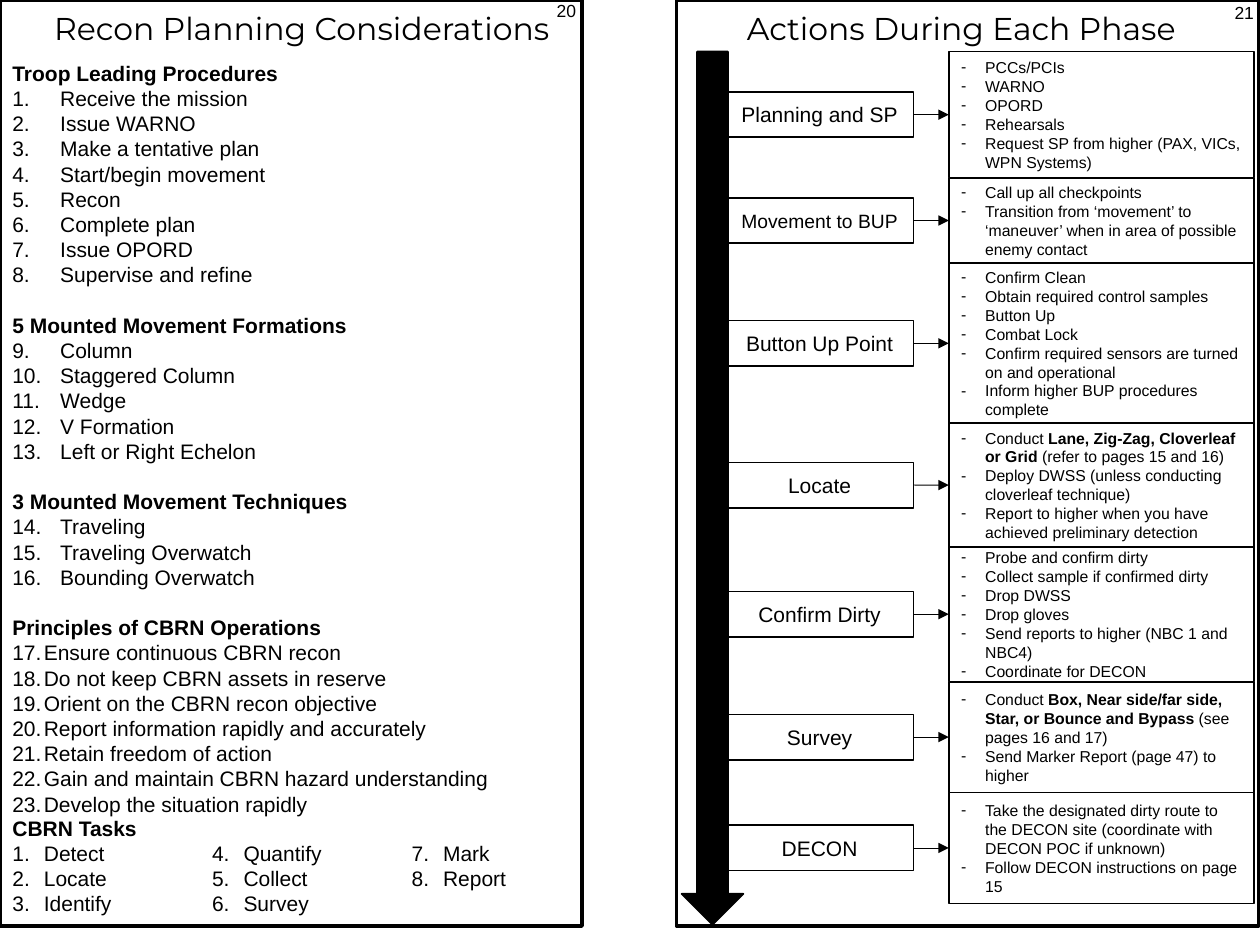
from pptx import Presentation
from pptx.dml.color import RGBColor
from pptx.enum.shapes import MSO_CONNECTOR, MSO_SHAPE
from pptx.enum.text import MSO_ANCHOR, PP_ALIGN
from pptx.oxml.ns import qn
from pptx.util import Inches, Pt
from lxml.etree import SubElement

BLACK = RGBColor(0, 0, 0)
WHITE = RGBColor(255, 255, 255)

# Content: page frames as left, title left, title width, title, number left, top, number
PAGES = [
    (0, 0.04, 4.71, "Recon Planning Considerations", 4.32, -0.05, "20"),
    (5.37, 5.26, 4.74, "Actions During Each Phase", 9.7, -0.03, "21"),
]

# Numbered lists: heading, gap above in points, indent, items
LISTS = [
    ("Troop Leading Procedures", 0, 0.38, [
        "Receive the mission", "Issue WARNO", "Make a tentative plan",
        "Start/begin movement", "Recon", "Complete plan", "Issue OPORD",
        "Supervise and refine"]),
    ("5 Mounted Movement Formations", 14.4, 0.38, [
        "Column", "Staggered Column", "Wedge", "V Formation",
        "Left or Right Echelon"]),
    ("3 Mounted Movement Techniques", 14.4, 0.38, [
        "Traveling", "Traveling Overwatch", "Bounding Overwatch"]),
    ("Principles of CBRN Operations", 14.4, 0.25, [
        "Ensure continuous CBRN recon", "Do not keep CBRN assets in reserve",
        "Orient on the CBRN recon objective",
        "Report information rapidly and accurately",
        "Retain freedom of action",
        "Gain and maintain CBRN hazard understanding",
        "Develop the situation rapidly"]),
]
TASKS = ["Detect", "Locate", "Identify", "Quantify", "Collect", "Survey",
         "Mark", "Report"]

# Phases: label, label size, box height, actions (bold between bars)
PHASES = [
    ("Planning and SP", 12, 1.0, [
        "PCCs/PCIs", "WARNO", "OPORD", "Rehearsals",
        "Request SP from higher (PAX, VICs, WPN Systems)"]),
    ("Movement to BUP", 11, 0.68, [
        "Call up all checkpoints",
        "Transition from ‘movement’ to ‘maneuver’ when in area of possible "
        "enemy contact"]),
    ("Button Up Point", 12, 1.27, [
        "Confirm Clean", "Obtain required control samples", "Button Up",
        "Combat Lock", "Confirm required sensors are turned on and operational",
        "Inform higher BUP procedures complete"]),
    ("Locate", 12, 0.98, [
        "Conduct |Lane, Zig-Zag, Cloverleaf or Grid |(refer to pages 15 and 16)",
        "Deploy DWSS (unless conducting cloverleaf technique)",
        "Report to higher when you have achieved preliminary detection"]),
    ("Confirm Dirty", 12, 1.07, [
        "Probe and confirm dirty", "Collect sample if confirmed dirty",
        "Drop DWSS", "Drop gloves", "Send reports to higher (NBC 1 and NBC4)",
        "Coordinate for DECON"]),
    ("Survey", 12, 0.88, [
        "Conduct |Box, Near side/far side, Star, or Bounce and Bypass "
        "|(see pages 16 and 17)",
        "Send Marker Report (page 47) to higher"]),
    ("DECON", 12, 0.88, [
        "Take the designated dirty route to the DECON site (coordinate with "
        "DECON POC if unknown)",
        "Follow DECON instructions on page 15"]),
]

prs = Presentation()
prs.slide_width, prs.slide_height = Inches(10), Inches(7.5)
slide = prs.slides.add_slide(prs.slide_layouts[6])
shapes = slide.shapes


def add_text(x, y, w, h, wrap=True):
    frame = shapes.add_textbox(*map(Inches, (x, y, w, h))).text_frame
    frame.word_wrap = wrap
    return frame


def add_box(kind, x, y, w, h, width, fill=WHITE):
    box = shapes.add_shape(kind, *map(Inches, (x, y, w, h)))
    box.shadow.inherit = False
    box.fill.solid()
    box.fill.fore_color.rgb = fill
    box.line.color.rgb = BLACK
    box.line.width = Pt(width)
    box.text_frame.word_wrap = True
    box.text_frame.vertical_anchor = MSO_ANCHOR.MIDDLE
    return box


def add_para(frame, text, size, font="Arial", bold=False, **form):
    first = frame.paragraphs[0]
    para = first if not first.runs else frame.add_paragraph()
    for name, value in {"alignment": PP_ALIGN.LEFT, **form}.items():
        setattr(para, name, value)
    for i, part in enumerate(text.split("|")):
        run = para.add_run()
        run.text = part
        run.font.color.rgb = BLACK
        look = {"size": Pt(size), "name": font, "bold": bold or i % 2 == 1}
        for name, value in look.items():
            setattr(run.font, name, value)
    return para


def add_mark(para, indent, start=None):
    """Give a paragraph a dash, or a number in a list that begins at start."""
    props = para._p.get_or_add_pPr()
    props.set("marL", str(Inches(indent)))
    props.set("indent", str(-Inches(indent)))
    SubElement(props, qn("a:buFont"), typeface="Arial")
    if start is None:
        SubElement(props, qn("a:buChar"), char="-")
    else:
        SubElement(props, qn("a:buAutoNum"), type="arabicPeriod",
                   startAt=str(start))


def add_arrow(start, end):
    line = shapes.add_connector(MSO_CONNECTOR.STRAIGHT, 0, 0, 0, 0)
    line.begin_connect(start, 3)
    line.end_connect(end, 1)
    line.line.color.rgb = BLACK
    line.line.width = Pt(0.5)
    SubElement(line.line._get_or_add_ln(), qn("a:tailEnd"), type="triangle")
    SubElement(line._element.spPr, qn("a:effectLst"))


# Page frames, titles and numbers
for left, x, w, title, num_x, num_y, num in PAGES:
    add_box(MSO_SHAPE.RECTANGLE, left, 0, 4.62, 7.35, 2)
    add_para(add_text(x, 0.02, w, 0.4), title, 18, "Montserrat",
             alignment=PP_ALIGN.CENTER)
    add_para(add_text(num_x, num_y, 0.36, 0.27, False), num, 10)

# Left page: numbering runs on from list to list
frame = add_text(0, 0.43, 4.6, 6.16)
start = 1
for head, gap, indent, items in LISTS:
    add_para(frame, head, 12, bold=True, space_before=Pt(gap))
    for item in items:
        add_mark(add_para(frame, item, 12), indent, start)
    start += len(items)

# Left page: tasks in three columns
add_para(add_text(0, 6.42, 4.75, 0.3), "CBRN Tasks", 12, bold=True)
frame = add_text(0, 6.62, 4.75, 0.72)
body = frame._txBody.bodyPr
body.set("numCol", "3")
body.set("spcCol", str(Inches(0.2)))
for task in TASKS:
    add_mark(add_para(frame, task, 12), 0.25, 1)

# Right page: stacked action boxes, each with its label at mid-height
top = 0.41
for name, size, high, acts in PHASES:
    label = add_box(MSO_SHAPE.RECTANGLE, 5.76, top + high / 2 - 0.18, 1.49, 0.36, 1)
    add_para(label.text_frame, name, size, alignment=PP_ALIGN.CENTER)
    box = add_box(MSO_SHAPE.RECTANGLE, 7.53, top, 2.42, high, 1)
    for act in acts:
        add_mark(add_para(box.text_frame, act, 9), 0.19)
    add_arrow(label, box)
    top += high

# Time arrow over the label ends
add_box(MSO_SHAPE.DOWN_ARROW, 5.41, 0.41, 0.49, 6.93, 1, BLACK)

prs.save("out.pptx")
